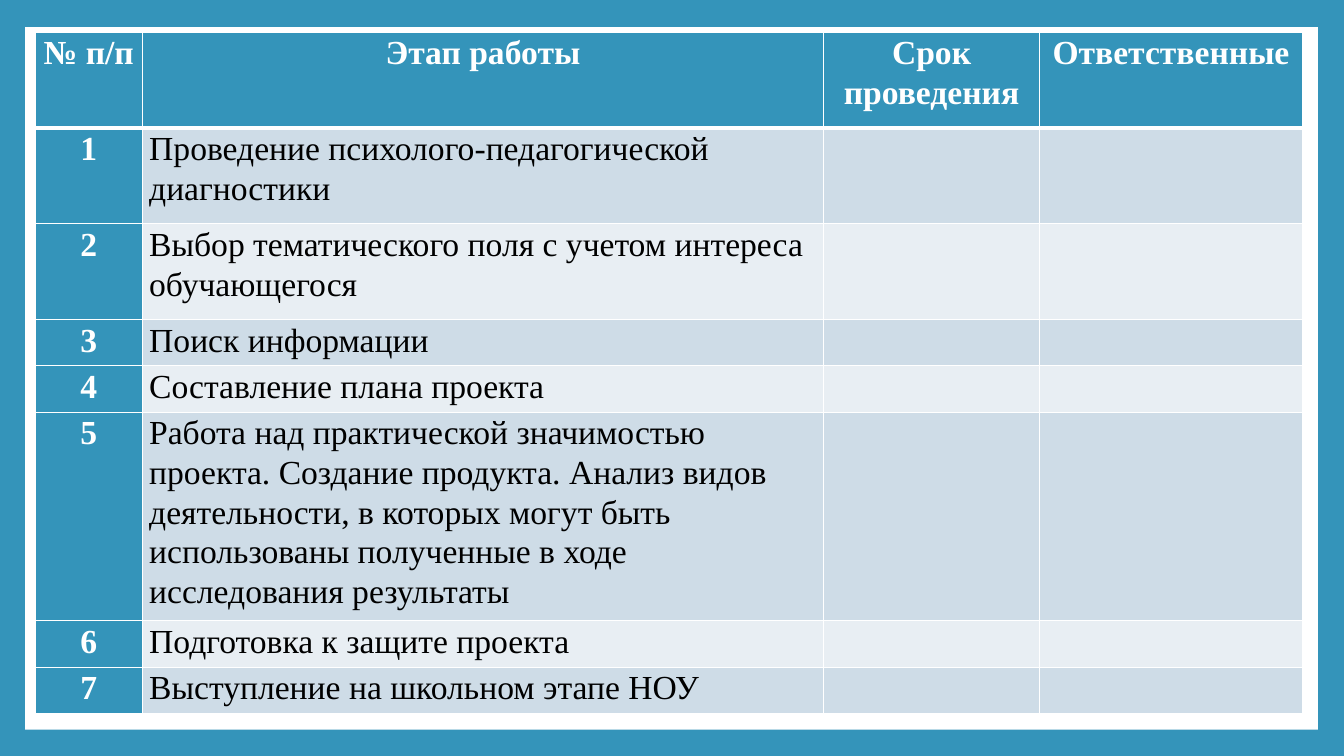
from lxml import etree
from pptx import Presentation
from pptx import util as u
from pptx.dml.color import RGBColor
from pptx.enum import shapes, text
from pptx.oxml import ns

PX = 9144
BLUE = RGBColor(0x34, 0x94, 0xBA)
WHITE = RGBColor(0xFF, 0xFF, 0xFF)
BLACK = RGBColor(0x00, 0x00, 0x00)
BAND_DARK = RGBColor(0xCE, 0xDC, 0xE7)
BAND_LIGHT = RGBColor(0xE8, 0xEE, 0xF3)
HEADINGS = ["№ п/п", "Этап работы", "Срок проведения", "Ответственные"]
STAGES = [
    "Проведение психолого-педагогической диагностики",
    "Выбор тематического поля с учетом интереса обучающегося",
    "Поиск информации",
    "Составление плана проекта",
    "Работа над практической значимостью проекта. Создание продукта. "
    "Анализ видов деятельности, в которых могут быть использованы "
    "полученные в ходе исследования результаты",
    "Подготовка к защите проекта",
    "Выступление на школьном этапе НОУ",
]
COLUMN_WIDTHS = [106, 676, 214, 261]
ROW_HEIGHTS = [95, 95, 95, 46, 46, 207, 46, 46]


def px(length):
    return u.Emu(length * PX)


def write(cell, words, color=BLACK, bold=False, align=text.PP_ALIGN.LEFT):
    para = cell.text_frame.paragraphs[0]
    para.alignment = align
    para.line_spacing = 1.07
    para.space_after = u.Pt(8)
    span = para.add_run()
    span.text = words
    span.font.name = "Times New Roman"
    span.font.size = u.Pt(24)
    span.font.bold = bold
    span.font.color.rgb = color


deck = Presentation()
deck.slide_width, deck.slide_height = px(1333), px(750)
page = deck.slides.add_slide(deck.slide_layouts[6])
page.background.fill.solid()
page.background.fill.fore_color.rgb = BLUE

panel = page.shapes.add_shape(
    shapes.MSO_SHAPE.RECTANGLE, px(25), px(27), px(1282), px(697))
panel.shadow.inherit = False
panel.fill.solid()
panel.fill.fore_color.rgb = WHITE
panel.line.fill.background()

rows = [HEADINGS] + [[str(i), stage, "", ""] for i, stage in enumerate(STAGES, 1)]
table = page.shapes.add_table(
    len(rows), len(HEADINGS), px(35), px(32),
    px(sum(COLUMN_WIDTHS)), px(sum(ROW_HEIGHTS))).table
table.first_col = True
for column, width in zip(table.columns, COLUMN_WIDTHS):
    column.width = px(width)
for row, height in zip(table.rows, ROW_HEIGHTS):
    row.height = px(height)

for r, row in enumerate(rows):
    for c, words in enumerate(row):
        cell = table.cell(r, c)
        heading = r == 0 or c == 0
        cell.margin_left = cell.margin_right = px(7)
        cell.margin_top = cell.margin_bottom = 0
        properties = cell._tc.get_or_add_tcPr()
        for side in ("lnL", "lnR", "lnT", "lnB"):
            thick = (r, side) in ((0, "lnB"), (1, "lnT"))
            border = etree.SubElement(
                properties, ns.qn("a:" + side), w=str(u.Pt(3 if thick else 1)))
            paint = etree.SubElement(border, ns.qn("a:solidFill"))
            etree.SubElement(paint, ns.qn("a:srgbClr"), val=str(WHITE))
        cell.fill.solid()
        cell.fill.fore_color.rgb = (
            BLUE if heading else BAND_DARK if r % 2 else BAND_LIGHT)
        if heading:
            write(cell, words, color=WHITE, bold=True, align=text.PP_ALIGN.CENTER)
        elif words:
            write(cell, words)

deck.save("out.pptx")
